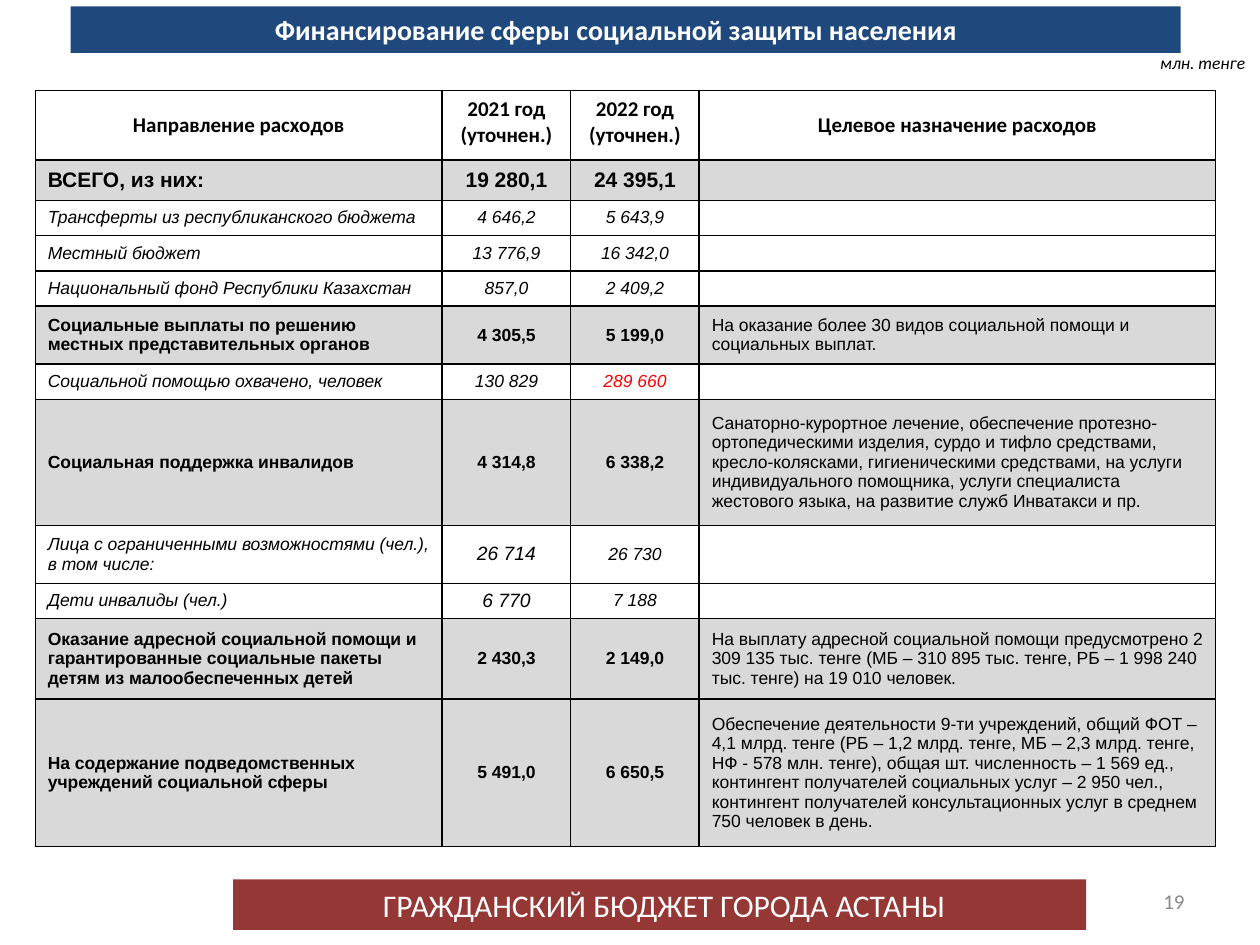
import dataclasses

import pptx
import pptx.util
import pptx.dml.color
import pptx.enum.shapes
import pptx.enum.text
import pptx.oxml
import pptx.oxml.ns
import lxml.etree

Inches = pptx.util.Inches
Align = pptx.enum.text.PP_ALIGN
Anchor = pptx.enum.text.MSO_ANCHOR


@dataclasses.dataclass(frozen=True)
class Theme:
    heading_font: str = "Calibri"
    body_font: str = "Arial"
    black: str = "000000"
    white: str = "FFFFFF"
    red: str = "FF0000"
    grey: str = "D9D9D9"
    blue: str = "1F497D"
    brown: str = "953735"
    muted: str = "898989"
    title: int = 16
    footer: int = 18
    head: int = 12
    large: int = 11
    body: int = 10


THEME = Theme()

BODY = dict(name=THEME.body_font, size=THEME.body, color=THEME.black, bold=False, italic=False)
HEADING = {**BODY, "name": THEME.heading_font}

ROW_STYLES = {
    "header": dict(fill=THEME.white, align=Align.CENTER,
                   font={**HEADING, "size": THEME.head, "bold": True}),
    "total": dict(fill=THEME.grey, align=Align.JUSTIFY,
                  font={**BODY, "size": THEME.head, "bold": True}),
    "source": dict(fill=THEME.white, align=Align.JUSTIFY, font={**BODY, "italic": True}),
    "group": dict(fill=THEME.grey, align=Align.LEFT, font={**BODY, "bold": True}),
    "count": dict(fill=THEME.white, align=Align.LEFT, font={**BODY, "italic": True}),
}

COLUMN_WIDTHS = [3.23, 1.02, 1.02, 4.1]

ROWS = [
    (0.55, "header", ["Направление расходов", "2021 год (уточнен.)", "2022 год (уточнен.)",
                      "Целевое назначение расходов"]),
    (0.32, "total", ["ВСЕГО, из них:", "19 280,1", "24 395,1", ""]),
    (0.28, "source", ["Трансферты из республиканского бюджета", "4 646,2", "5 643,9", ""]),
    (0.28, "source", ["Местный бюджет", "13 776,9", "16 342,0", ""]),
    (0.28, "source", ["Национальный фонд Республики Казахстан", "857,0", "2 409,2", ""]),
    (0.46, "group", ["Социальные выплаты по решению местных представительных органов",
                     "4 305,5", "5 199,0",
                     "На оказание более 30 видов социальной помощи и социальных выплат."]),
    (0.28, "count", ["Социальной помощью охвачено, человек", "130 829", "289 660", ""]),
    (1.0, "group", ["Социальная поддержка инвалидов", "4 314,8", "6 338,2",
                    "Санаторно-курортное лечение, обеспечение протезно- ортопедическими изделия, "
                    "сурдо и тифло средствами, кресло-колясками, гигиеническими средствами, на услуги "
                    "индивидуального помощника, услуги специалиста жестового языка, на развитие служб "
                    "Инватакси и пр."]),
    (0.46, "count", ["Лица с ограниченными возможностями (чел.), в том числе:",
                     "26 714", "26 730", ""]),
    (0.28, "count", ["Дети инвалиды (чел.)", "6 770", "7 188", ""]),
    (0.64, "group", ["Оказание адресной социальной помощи и гарантированные социальные пакеты "
                     "детям из малообеспеченных детей", "2 430,3", "2 149,0",
                     "На выплату адресной социальной помощи предусмотрено 2 309 135 тыс. тенге "
                     "(МБ – 310 895 тыс. тенге, РБ – 1 998 240 тыс. тенге) на 19 010 человек."]),
    (1.17, "group", ["На содержание подведомственных учреждений социальной сферы",
                     "5 491,0", "6 650,5",
                     "Обеспечение деятельности 9-ти учреждений, общий ФОТ – 4,1 млрд. тенге "
                     "(РБ – 1,2 млрд. тенге, МБ – 2,3 млрд. тенге, НФ - 578 млн. тенге), общая шт. "
                     "численность – 1 569 ед., контингент получателей социальных услуг – 2 950 чел., "
                     "контингент получателей консультационных услуг в среднем 750 человек в день."]),
]

CELL_OVERRIDES = {
    (6, 2): {"color": THEME.red},
    (8, 1): {"size": THEME.large},
    (9, 1): {"size": THEME.large},
}


def rgb(value):
    return pptx.dml.color.RGBColor.from_string(value)


def paint(target, color):
    target.fill.solid()
    target.fill.fore_color.rgb = rgb(color)


def write_text(text_frame, text, font_format, align):
    paragraph = text_frame.paragraphs[0]
    paragraph.alignment = align
    if not text:
        end = lxml.etree.SubElement(paragraph._p, pptx.oxml.ns.qn("a:endParaRPr"))
        end.set("sz", str(font_format["size"] * 100))
        return
    run = paragraph.add_run()
    run.text = text
    values = dict(font_format)
    run.font.color.rgb = rgb(values.pop("color"))
    values["size"] = pptx.util.Pt(values["size"])
    for attribute, value in values.items():
        setattr(run.font, attribute, value)


def add_borders(cell):
    properties = cell._tc.get_or_add_tcPr()
    for position, side in enumerate(("lnL", "lnR", "lnT", "lnB")):
        line = pptx.oxml.parse_xml(
            f'<a:{side} {pptx.oxml.ns.nsdecls("a")} w="12700"><a:solidFill>'
            f'<a:srgbClr val="{THEME.black}"/></a:solidFill></a:{side}>')
        properties.insert(position, line)


def add_bar(slide, left, top, width, height, color):
    bar = slide.shapes.add_shape(pptx.enum.shapes.MSO_SHAPE.RECTANGLE, Inches(left),
                                 Inches(top), Inches(width), Inches(height))
    bar.shadow.inherit = False
    paint(bar, color)
    bar.line.fill.background()
    return bar


def add_label(slide, left, top, width, height, text, font_format, align, anchor=Anchor.TOP):
    box = slide.shapes.add_textbox(Inches(left), Inches(top), Inches(width), Inches(height))
    box.text_frame.word_wrap = True
    box.text_frame.vertical_anchor = anchor
    write_text(box.text_frame, text, font_format, align)


def add_budget_table(slide):
    table = slide.shapes.add_table(len(ROWS), len(COLUMN_WIDTHS), Inches(0.28), Inches(0.72),
                                   Inches(sum(COLUMN_WIDTHS)),
                                   Inches(sum(row[0] for row in ROWS))).table
    table.first_row = table.horz_banding = False
    for column, width in zip(table.columns, COLUMN_WIDTHS):
        column.width = Inches(width)
    for row_index, (height, kind, texts) in enumerate(ROWS):
        table.rows[row_index].height = Inches(height)
        style = ROW_STYLES[kind]
        for column_index, text in enumerate(texts):
            cell = table.cell(row_index, column_index)
            is_year = column_index in (1, 2)
            font_format = {**style["font"], **CELL_OVERRIDES.get((row_index, column_index), {})}
            if kind == "group" and column_index == 3:
                font_format["bold"] = False
            top_anchored = kind == "header" and is_year
            cell.vertical_anchor = Anchor.TOP if top_anchored else Anchor.MIDDLE
            paint(cell, style["fill"])
            add_borders(cell)
            write_text(cell.text_frame, text, font_format,
                       Align.CENTER if is_year else style["align"])


def main():
    presentation = pptx.Presentation()
    presentation.slide_width = Inches(10)
    presentation.slide_height = Inches(7.5)
    slide = presentation.slides.add_slide(presentation.slide_layouts[6])

    add_budget_table(slide)

    title_bar = add_bar(slide, 0.56, 0.05, 8.81, 0.37, THEME.blue)
    title_bar.text_frame.word_wrap = True
    title_bar.text_frame.margin_right = Inches(0.25)
    write_text(title_bar.text_frame, "Финансирование сферы социальной защиты населения",
               {**HEADING, "size": THEME.title, "color": THEME.white, "bold": True}, Align.CENTER)
    add_label(slide, 9.11, 0.36, 1.09, 0.27, "млн. тенге",
              {**HEADING, "italic": True}, Align.LEFT)

    add_bar(slide, 1.85, 6.98, 6.77, 0.4, THEME.brown)
    add_label(slide, 2.24, 6.98, 6.06, 0.4, "ГРАЖДАНСКИЙ БЮДЖЕТ ГОРОДА АСТАНЫ",
              {**HEADING, "size": THEME.footer, "color": THEME.white}, Align.CENTER)
    add_label(slide, 7.17, 6.95, 2.33, 0.4, "19",
              {**HEADING, "size": THEME.head, "color": THEME.muted}, Align.RIGHT, Anchor.MIDDLE)

    presentation.save("out.pptx")


if __name__ == "__main__":
    main()
